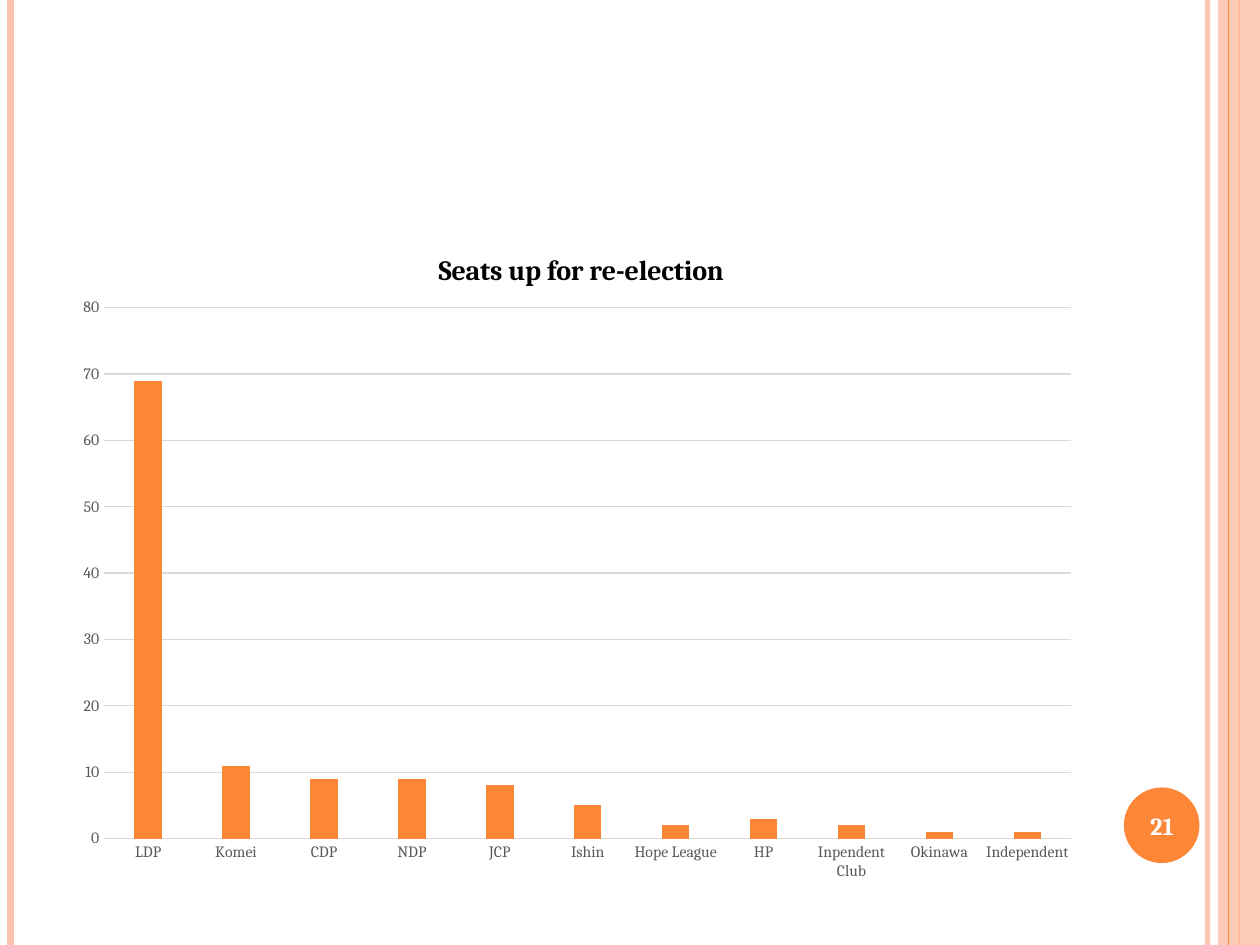
import pptx
import pptx.chart.data
import pptx.dml.color
import pptx.enum.chart
import pptx.enum.shapes
import pptx.enum.text
import pptx.oxml
import pptx.oxml.ns
import pptx.util
from lxml import etree

Pt = pptx.util.Pt
RGBColor = pptx.dml.color.RGBColor
qn = pptx.oxml.ns.qn

ORANGE = RGBColor(0xFE, 0x86, 0x37)
PEACH = RGBColor(0xFE, 0xC3, 0xAE)
WHITE = RGBColor(0xFF, 0xFF, 0xFF)
BLACK = RGBColor(0, 0, 0)
GREY = RGBColor(0x59, 0x59, 0x59)
LIGHT_GREY = RGBColor(0xD9, 0xD9, 0xD9)
FONT = "Cambria"
SLIDE_WIDTH, SLIDE_HEIGHT = 720, 540

SEATS = {
    "LDP": 69, "Komei": 11, "CDP": 9, "NDP": 9, "JCP": 8, "Ishin": 5,
    "Hope League": 2, "HP": 3, "Inpendent Club": 2, "Okinawa": 1,
    "Independent": 1,
}


def set_opacity(shape, percent):
    """Make the shape's fill or line colour partly transparent."""
    color = next(shape._element.spPr.iter(qn("a:srgbClr")))
    etree.SubElement(color, qn("a:alpha")).set("val", str(percent * 1000))


def format_font(font, size, color, bold=False):
    font.name = FONT
    font.size = Pt(size)
    font.bold = bold
    font.color.rgb = color


def add_stripe(slide, x, width, color):
    """Draw a vertical line over the full height of the slide."""
    line = slide.shapes.add_connector(
        pptx.enum.shapes.MSO_CONNECTOR.STRAIGHT,
        Pt(x), Pt(0), Pt(x), Pt(SLIDE_HEIGHT))
    line.line.color.rgb = color
    line.line.width = Pt(width)
    etree.SubElement(line._element.spPr, qn("a:effectLst"))
    return line


def add_filled_shape(slide, kind, left, top, width, height, color):
    shape = slide.shapes.add_shape(
        kind, Pt(left), Pt(top), Pt(width), Pt(height))
    shape.fill.solid()
    shape.fill.fore_color.rgb = color
    shape.line.fill.background()
    shape.shadow.inherit = False
    return shape


def add_text(slide, text, left, top, width, height, *, size, color, bold=False):
    """Add a centred line of text."""
    box = slide.shapes.add_textbox(Pt(left), Pt(top), Pt(width), Pt(height))
    frame = box.text_frame
    frame.word_wrap = True
    frame.vertical_anchor = pptx.enum.text.MSO_ANCHOR.MIDDLE
    paragraph = frame.paragraphs[0]
    paragraph.alignment = pptx.enum.text.PP_ALIGN.CENTER
    run = paragraph.add_run()
    run.text = text
    format_font(run.font, size, color, bold)


def set_layout(element, **fractions):
    """Place a chart part by fractions of the chart area."""
    layout = element.find(qn("c:layout"))
    if layout is None:
        layout = etree.Element(qn("c:layout"))
        text = element.find(qn("c:tx"))
        element.insert(0 if text is None else 1, layout)
    manual = etree.SubElement(layout, qn("c:manualLayout"))
    if "w" in fractions:
        etree.SubElement(manual, qn("c:layoutTarget")).set("val", "inner")
    for name in ("x", "y"):
        etree.SubElement(manual, qn(f"c:{name}Mode")).set("val", "edge")
    for name, value in fractions.items():
        etree.SubElement(manual, qn(f"c:{name}")).set("val", str(value))


def format_axis(axis):
    axis.major_tick_mark = pptx.enum.chart.XL_TICK_MARK.NONE
    axis.minor_tick_mark = pptx.enum.chart.XL_TICK_MARK.NONE
    format_font(axis.tick_labels.font, 9, GREY)


def format_line(line):
    line.color.rgb = LIGHT_GREY
    line.width = Pt(0.75)


def add_seat_chart(slide):
    data = pptx.chart.data.CategoryChartData()
    data.categories = list(SEATS)
    data.add_series("Series 1", list(SEATS.values()))
    chart = slide.shapes.add_chart(
        pptx.enum.chart.XL_CHART_TYPE.COLUMN_CLUSTERED,
        Pt(36), Pt(126), Pt(588), Pt(384), data).chart
    format_font(chart.font, 10, BLACK)
    chart.has_legend = False

    # Title
    chart.has_title = True
    paragraph = chart.chart_title.text_frame.paragraphs[0]
    run = paragraph.add_run()
    run.text = "Seats up for re-election"
    format_font(run.font, 16, BLACK, bold=True)
    set_layout(chart.chart_title._element, x=0.36, y=0.04)

    # Axes
    format_axis(chart.category_axis)
    format_line(chart.category_axis.format.line)
    value_axis = chart.value_axis
    format_axis(value_axis)
    value_axis.minimum_scale, value_axis.maximum_scale = 0, 80
    value_axis.major_unit = 10
    value_axis.format.line.fill.background()
    format_line(value_axis.major_gridlines.format.line)

    # Columns
    plot = chart.plots[0]
    plot.gap_width = 219
    plot.overlap = -27
    plot.vary_by_categories = False
    fill = plot.series[0].format.fill
    fill.solid()
    fill.fore_color.rgb = ORANGE
    set_layout(chart._chartSpace.chart.plotArea, x=0.04, y=0.13, w=0.94, h=0.79)


def main():
    presentation = pptx.Presentation()
    presentation.slide_width = Pt(SLIDE_WIDTH)
    presentation.slide_height = Pt(SLIDE_HEIGHT)
    slide = presentation.slides.add_slide(presentation.slide_layouts[6])
    shapes = pptx.enum.shapes.MSO_SHAPE

    # Stripes along the slide's edges
    set_opacity(add_stripe(slide, 690, 3, PEACH), 93)
    add_stripe(slide, 6, 4.5, PEACH)
    add_stripe(slide, 708, 1.5, ORANGE)
    band = add_filled_shape(
        slide, shapes.RECTANGLE, 696, 0, 24, SLIDE_HEIGHT, PEACH)
    set_opacity(band, 87)
    add_stripe(slide, 702, 0.75, ORANGE)

    # Slide number
    add_filled_shape(slide, shapes.OVAL, 642.24, 450, 43.2, 43.2, ORANGE)
    add_text(slide, "21", 640, 451.5, 48, 41, size=14, color=WHITE, bold=True)

    add_seat_chart(slide)
    presentation.save("out.pptx")


if __name__ == "__main__":
    main()
